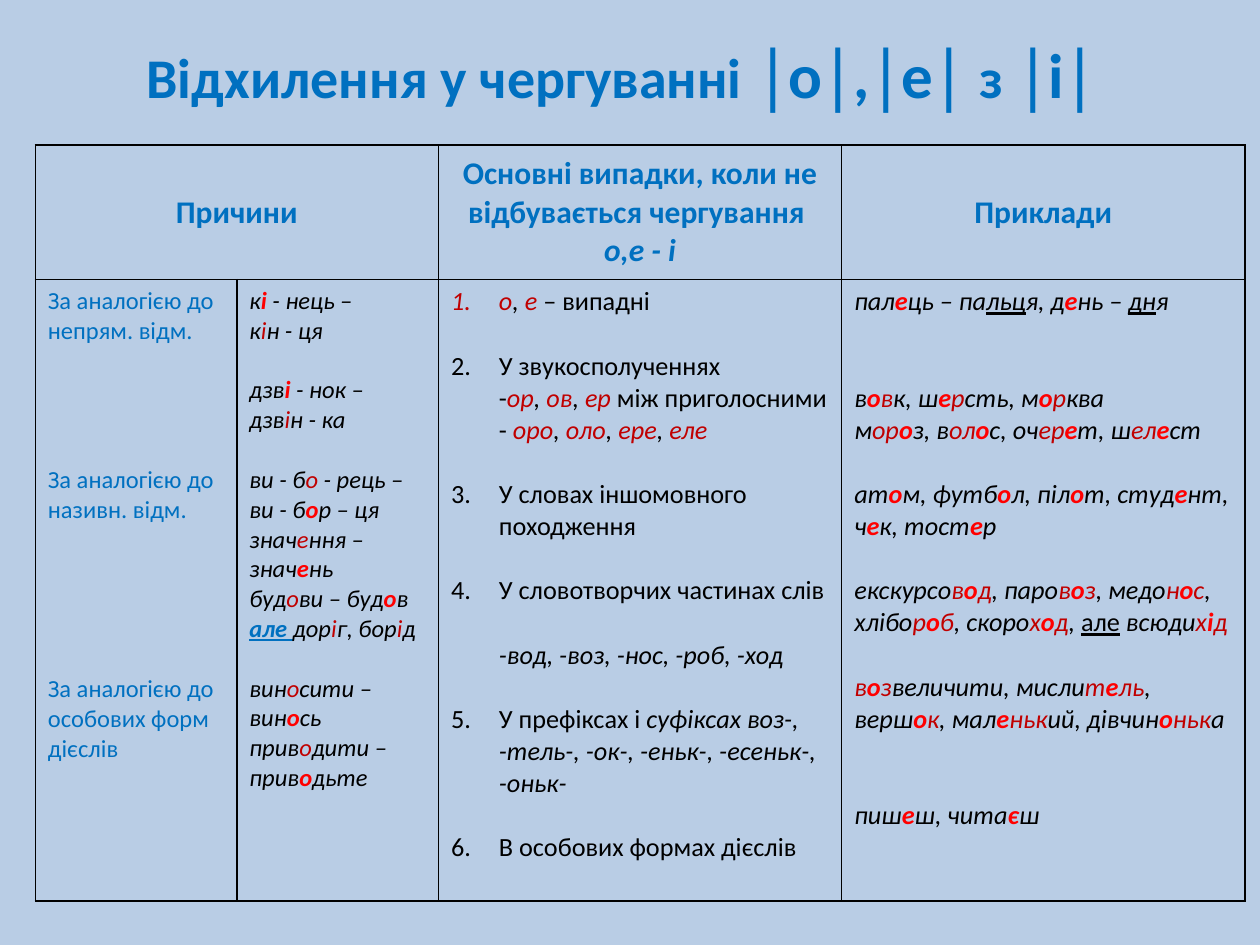
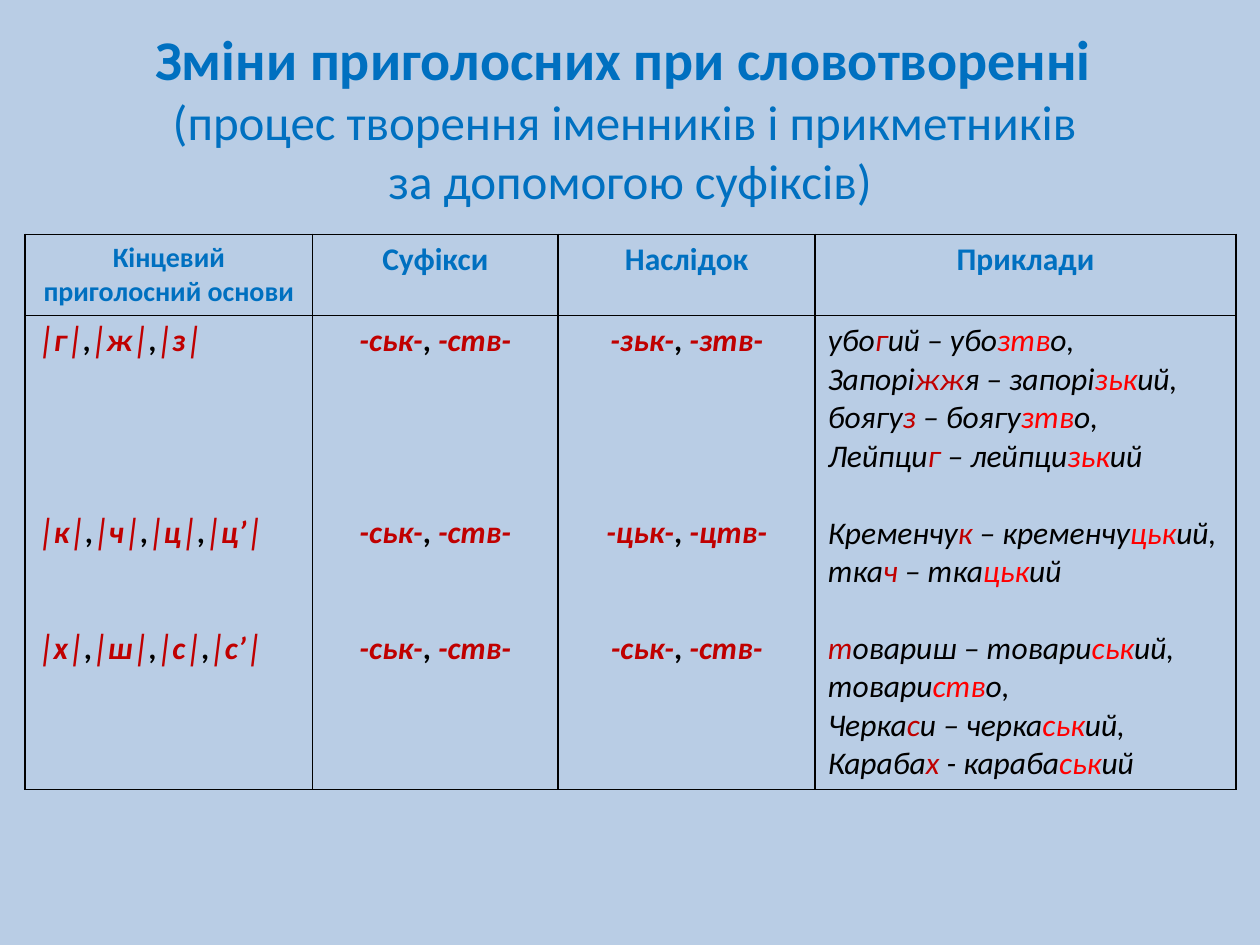
"""Build two slides of Ukrainian spelling tables."""
from dataclasses import dataclass

import lxml.etree
import pptx
import pptx.dml.color
import pptx.enum.text
import pptx.oxml.ns
import pptx.util

Inches = pptx.util.Inches
Align = pptx.enum.text.PP_ALIGN
Anchor = pptx.enum.text.MSO_ANCHOR


@dataclass(frozen=True)
class Theme:
    """Colours, font and type sizes shared by the slides."""

    font: str = "Calibri"
    background: str = "B9CDE5"
    blue: str = "0070C0"
    black: str = "000000"
    dark_red: str = "C00000"
    red: str = "FF0000"
    title: int = 32
    symbol: int = 36
    subtitle: int = 28
    header: int = 18
    small_header: int = 16
    example: int = 15
    note: int = 14
    border: float = 1
    line_height: float = 1.22
    number_indent: float = 0.38


THEME = Theme()

MARKS = {
    "[": {"color": THEME.dark_red, "italic": True},
    "{": {"color": THEME.red, "italic": True, "bold": True},
    "<": {"color": THEME.red, "italic": True},
    "«": {"italic": True},
    "_": {"underline": True},
    "~": {"underline": True, "italic": False},
    "^": {"color": THEME.blue, "bold": True, "underline": True},
    **dict.fromkeys("]}>»|", {}),
}

DEVIATION_HEADERS = [
    ("Причини", {}),
    ("", {}),
    ("Основні випадки, коли не відбувається чергування \n«о,е - і»", {}),
    ("Приклади", {}),
]

REASONS = """За аналогією до непрям. відм.




За аналогією до називн. відм.





За аналогією до особових форм дієслів"""

REASON_EXAMPLES = """к{і }- нець –
к[і]н - ця

дзв{і} - нок –
дзв[і]н - ка

ви - б[о] - рець –
ви - б{о}р – ця
знач[е]ння – знач{е}нь
буд[о]ви – буд{о}в
^але |дор[і]г, бор[і]д

вин[о]сити – вин{о}сь
прив[о]дити – прив{о}дьте"""

CASES = """#[о]«, »[е ]– випадні

#У звукосполученнях
-[ор]«, »[ов]«, »[ер ]між приголосними
- [оро]«, »[оло]«, »[ере]«, »[еле]

#У словах іншомовного походження

#У словотворчих частинах слів

«-вод, -воз, -нос, -роб, -ход»

#У префіксах і «суфіксах воз-,»
«-тель-, -ок-, -еньк-, -есеньк-,»
«-оньк-»

#В особових формах дієслів"""

CASE_EXAMPLES = """пал{е}ць – па_льц|я, д{е}нь – _дн|я


в{о}[в]к, ш{е}[р]сть, м{о}[р]ква
м[ор]{о}з, в[ол]{о}с, оч[ер]{е}т, ш[ел]{е}ст

ат{о}м, футб{о}л, піл{о}т, студ{е}нт, ч{е}к, тост{е}р

екскурсо[в]{о}[д], паро[в]{о}[з], медо[н]{о}[с], \
хлібо[р]{о}[б], скоро[х]{о}[д], ~але| всюди[х]{і}[д]

[в]{о}[з]величити, мисли[т]{е}[ль], верш{о}[к], \
мал{е}[ньк]ий, дівчин{о}[ньк]а


пиш{е}ш, чита{є}ш"""

CONSONANT_HEADERS = [
    ("Кінцевий приголосний основи", {"size": THEME.small_header}),
    ("Суфікси", {}),
    ("Наслідок", {}),
    ("Приклади", {}),
]

CONSONANTS = """[│г│],[│ж│],[│з│]




[│к│],[│ч│],[│ц│],[│ц’│]


[│х│],[│ш│],[│с│],[│с’│]"""

SUFFIXES = """[-ськ-], [-ств-]




[-ськ-], [-ств-]


[-ськ-], [-ств-]"""

RESULTS = """[-зьк-], [-зтв-]




[-цьк-], [-цтв-]


[-ськ-], [-ств-]"""

CONSONANT_EXAMPLES = """убо[г]ий – убо<зтв>о,
Запорі[жж]я – запорі<зьк>ий,
боягу[з] – боягу<зтв>о,
Лейпци[г] – лейпци<зьк>ий

Кременчу[к] – кременчу<цьк>ий,
тка[ч] – тка<цьк>ий

[т]овариш – товари<ськ>ий,
товари<ств>о,
Черка[с]и – черка<ськ>ий,
Караба[х] - караба<ськ>ий"""


def write_run(paragraph, text, size, color=THEME.black, bold=False, italic=False, underline=False):
    """Append one formatted run to a paragraph."""
    run = paragraph.add_run()
    run.text = text
    font = run.font
    font.name = THEME.font
    font.size = pptx.util.Pt(size)
    font.bold, font.italic, font.underline = bold, italic, underline
    font.color.rgb = pptx.dml.color.RGBColor.from_string(color)


def write_marked(paragraph, text, **style):
    """Append text whose marks switch between run formats."""
    pending, current = "", style
    for letter in text:
        if letter in MARKS:
            if pending:
                write_run(paragraph, pending, **current)
            pending, current = "", style | MARKS[letter]
        else:
            pending += letter
    if pending:
        write_run(paragraph, pending, **current)


def indent_item(paragraph, number=None):
    """Indent a list line and hang its number when it has one."""
    properties = paragraph._p.get_or_add_pPr()
    indent = Inches(THEME.number_indent)
    properties.set("marL", str(indent))
    properties.set("indent", str(-indent if number else 0))
    if number:
        bullet = lxml.etree.SubElement(properties, pptx.oxml.ns.qn("a:buAutoNum"))
        bullet.set("type", "arabicPeriod")
        bullet.set("startAt", str(number))


def write_text(frame, text, align=Align.LEFT, numbered=False, **style):
    """Write lines as paragraphs, turning empty lines into space before."""
    gap, number = 0, 0
    paragraph = None
    for line in text.split("\n"):
        if not line:
            gap += 1
            continue
        paragraph = frame.add_paragraph() if paragraph else frame.paragraphs[0]
        paragraph.alignment = align
        if numbered:
            starts_item = line.startswith("#")
            number += starts_item
            indent_item(paragraph, number if starts_item else None)
        if gap:
            paragraph.space_before = pptx.util.Pt(round(gap * style["size"] * THEME.line_height, 1))
        write_marked(paragraph, line.removeprefix("#"), **style)
        gap = 0


def add_borders(cell):
    """Draw a thin black line on each side of a cell."""
    properties = cell._tc.get_or_add_tcPr()
    for position, side in enumerate("LRTB"):
        line = lxml.etree.Element(pptx.oxml.ns.qn(f"a:ln{side}"), w=str(pptx.util.Pt(THEME.border)))
        fill = lxml.etree.SubElement(line, pptx.oxml.ns.qn("a:solidFill"))
        lxml.etree.SubElement(fill, pptx.oxml.ns.qn("a:srgbClr"), val=THEME.black)
        properties.insert(position, line)


def add_title_slide(presentation, box, lines):
    """Add a slide whose title holds lines of (text, size, bold) parts."""
    slide = presentation.slides.add_slide(presentation.slide_layouts[5])
    title = slide.shapes.title
    title.left, title.top, title.width, title.height = map(Inches, box)
    frame = title.text_frame
    frame.word_wrap = True
    frame.auto_size = pptx.enum.text.MSO_AUTO_SIZE.NONE
    frame.vertical_anchor = Anchor.MIDDLE
    for index, parts in enumerate(lines):
        paragraph = frame.add_paragraph() if index else frame.paragraphs[0]
        paragraph.alignment = Align.CENTER
        for text, size, bold in parts:
            write_run(paragraph, text, size, color=THEME.blue, bold=bold)
    return slide


def add_grid(slide, left, top, widths, heights, headers, bodies, header_anchor=Anchor.TOP):
    """Add a bordered table with a header row and one body row."""
    box = map(Inches, (left, top, sum(widths), sum(heights)))
    table = slide.shapes.add_table(2, len(widths), *box).table
    table.first_row = table.horz_banding = False
    for column, width in zip(table.columns, widths):
        column.width = Inches(width)
    for row, height in zip(table.rows, heights):
        row.height = Inches(height)
    for cell in table.iter_cells():
        cell.fill.background()
        add_borders(cell)
    header_style = {"size": THEME.header, "color": THEME.blue, "bold": True, "align": Align.CENTER}
    for index, (text, style) in enumerate(headers):
        table.cell(0, index).vertical_anchor = header_anchor
        write_text(table.cell(0, index).text_frame, text, **(header_style | style))
    for index, (text, style) in enumerate(bodies):
        write_text(table.cell(1, index).text_frame, text, **style)
    return table


def build_deviations(presentation):
    """Build the slide on exceptions to vowel alternation."""
    parts = [
        ("Відхилення у чергуванні", THEME.title, True),
        (" │о│,│е│ ", THEME.symbol, True),
        ("з", THEME.title, True),
        (" │і│", THEME.symbol, True),
    ]
    slide = add_title_slide(presentation, (0.43, 0.13, 9, 0.9), [parts])
    bodies = [
        (REASONS, {"size": THEME.note, "color": THEME.blue}),
        (REASON_EXAMPLES, {"size": THEME.note, "italic": True}),
        (CASES, {"size": THEME.example, "numbered": True}),
        (CASE_EXAMPLES, {"size": THEME.example, "italic": True}),
    ]
    table = add_grid(slide, 0.28, 1.15, (1.6, 1.6, 3.2, 3.2), (1.07, 4.93),
                     DEVIATION_HEADERS, bodies, Anchor.MIDDLE)
    table.cell(0, 0).merge(table.cell(0, 1))


def build_consonants(presentation):
    """Build the slide on consonant changes before suffixes."""
    lines = [
        [("Зміни приголосних при словотворенні ", THEME.title, True)],
        [("(процес творення іменників і прикметників ", THEME.subtitle, False)],
        [("за допомогою суфіксів)", THEME.subtitle, False)],
    ]
    slide = add_title_slide(presentation, (0, 0.3, 10, 1.25), lines)
    symbols = {"size": THEME.header, "bold": True}
    centred = symbols | {"align": Align.CENTER}
    bodies = [
        (CONSONANTS, symbols),
        (SUFFIXES, centred),
        (RESULTS, centred),
        (CONSONANT_EXAMPLES, {"size": THEME.header, "italic": True}),
    ]
    add_grid(slide, 0.2, 1.86, (2.28, 1.95, 2.04, 3.34), (0.64, 3.76), CONSONANT_HEADERS, bodies)


def main():
    """Create the presentation and save it."""
    presentation = pptx.Presentation()
    presentation.slide_width, presentation.slide_height = Inches(10), Inches(7.5)
    fill = presentation.slide_master.background.fill
    fill.solid()
    fill.fore_color.rgb = pptx.dml.color.RGBColor.from_string(THEME.background)
    build_deviations(presentation)
    build_consonants(presentation)
    presentation.save("out.pptx")


if __name__ == "__main__":
    main()
